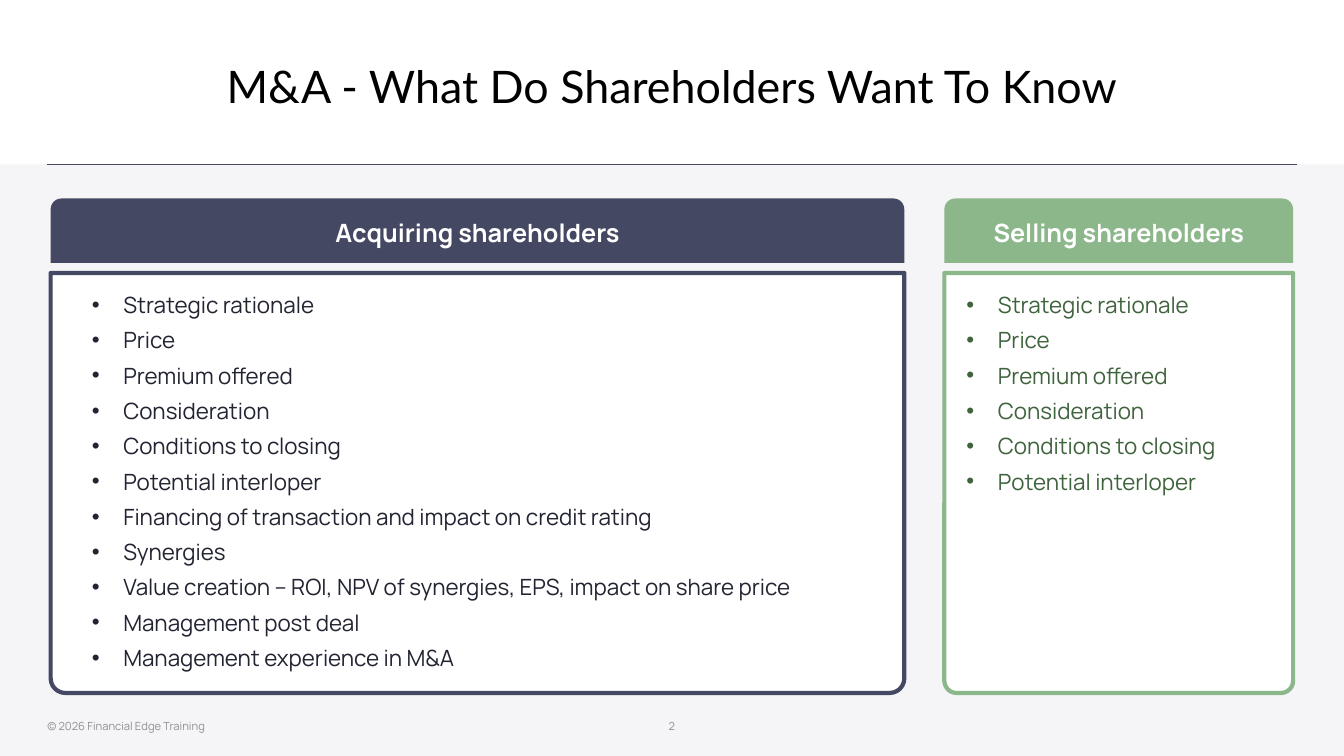
"""Build the slide on what acquiring and selling shareholders want to know."""
from lxml import etree
from pptx import Presentation
from pptx.dml.color import RGBColor
from pptx.enum import shapes, text
from pptx.oxml import ns
from pptx.util import Pt

NAVY = RGBColor(0x44, 0x48, 0x63)
GREEN = RGBColor(0x8C, 0xB7, 0x8A)
DARK_GREEN = RGBColor(0x3F, 0x63, 0x3D)
INK = RGBColor(0x22, 0x24, 0x32)
GREY = RGBColor(0x90, 0x90, 0x90)
PALE = RGBColor(0xF5, 0xF5, 0xF7)
WHITE = RGBColor(0xFF, 0xFF, 0xFF)
BLACK = RGBColor(0, 0, 0)

TITLE = "M&A - What Do Shareholders Want To Know"
COPYRIGHT = "© 2026 Financial Edge Training"
PAGE = "2"
SHARED = [
    "Strategic rationale",
    "Price",
    "Premium offered",
    "Consideration",
    "Conditions to closing",
    "Potential interloper",
]
ACQUIRER_ONLY = [
    "Financing of transaction and impact on credit rating",
    "Synergies",
    "Value creation – ROI, NPV of synergies, EPS, impact on share price",
    "Management post deal",
    "Management experience in M&A",
]
PANELS = [
    {"heading": "Acquiring shareholders", "points": SHARED + ACQUIRER_ONLY,
     "left": 36.2, "width": 609.8, "indent": 22.3, "color": NAVY, "ink": INK},
    {"heading": "Selling shareholders", "points": SHARED,
     "left": 674.6, "width": 249.1, "indent": 8.7, "color": GREEN, "ink": DARK_GREEN},
]

SLIDE_WIDTH, SLIDE_HEIGHT = 960, 540
MARGIN = 33.8
RULE_TOP = 117.4
HEADER_TOP, HEADER_HEIGHT = 141.8, 46.1
BODY_TOP, BODY_HEIGHT = 195, 300
LIST_TOP, LIST_HEIGHT = 204.5, 281
HANGING = 22.5
FOOTER_TOP, FOOTER_HEIGHT = 507.6, 21.6


def points(*lengths):
    return [Pt(length) for length in lengths]


def add_run(paragraph, content, size, color, bold=False, font="Manrope"):
    run = paragraph.add_run()
    run.text = content
    run.font.name = font
    run.font.size = Pt(size)
    run.font.bold = bold
    run.font.color.rgb = color


def add_block(slide, kind, box, fill, line=None):
    shape = slide.shapes.add_shape(kind, *points(*box))
    shape.shadow.inherit = False
    shape.fill.solid()
    shape.fill.fore_color.rgb = fill
    if line is None:
        shape.line.fill.background()
    else:
        shape.line.color.rgb = line
        shape.line.width = Pt(3)
    return shape


def add_frame(slide, *box):
    frame = slide.shapes.add_textbox(*points(*box)).text_frame
    frame.word_wrap = True
    return frame


def add_bullet(paragraph, color):
    properties = paragraph._p.get_or_add_pPr()
    properties.set("marL", str(Pt(HANGING)))
    properties.set("indent", str(-Pt(HANGING)))
    bullet_color = etree.SubElement(properties, ns.qn("a:buClr"))
    etree.SubElement(bullet_color, ns.qn("a:srgbClr"), val=str(color))
    etree.SubElement(properties, ns.qn("a:buFont"), typeface="Arial")
    etree.SubElement(properties, ns.qn("a:buChar"), char="•")


def add_background(slide):
    add_block(slide, shapes.MSO_SHAPE.RECTANGLE,
              (0, RULE_TOP, SLIDE_WIDTH, SLIDE_HEIGHT - RULE_TOP), PALE)
    rule = slide.shapes.add_connector(
        shapes.MSO_CONNECTOR.STRAIGHT,
        *points(MARGIN, RULE_TOP, SLIDE_WIDTH - MARGIN, RULE_TOP))
    rule.line.color.rgb = NAVY
    rule.line.width = Pt(0.75)
    etree.SubElement(rule._element.spPr, ns.qn("a:effectLst"))


def add_title(slide):
    title = slide.shapes.title
    title.left, title.top, title.width, title.height = points(
        MARGIN, 31.7, SLIDE_WIDTH - 2 * MARGIN, 59)
    frame = title.text_frame
    frame.word_wrap = True
    frame.vertical_anchor = text.MSO_ANCHOR.MIDDLE
    paragraph = frame.paragraphs[0]
    paragraph.alignment = text.PP_ALIGN.CENTER
    add_run(paragraph, TITLE, 32, BLACK, font="Lato")


def add_panel(slide, panel):
    left, width = panel["left"], panel["width"]
    rounded = shapes.MSO_SHAPE.ROUND_2_SAME_RECTANGLE
    header = add_block(slide, rounded, (left, HEADER_TOP, width, HEADER_HEIGHT),
                       panel["color"])
    header.text_frame.vertical_anchor = text.MSO_ANCHOR.MIDDLE
    heading = header.text_frame.paragraphs[0]
    heading.alignment = text.PP_ALIGN.CENTER
    add_run(heading, panel["heading"], 18, WHITE, bold=True)

    body = add_block(slide, rounded, (left, BODY_TOP, width, BODY_HEIGHT),
                     WHITE, panel["color"])
    body.adjustments[0] = 0
    body.adjustments[1] = 0.035

    indent = panel["indent"]
    frame = add_frame(slide, left + indent, LIST_TOP, width - 2 * indent, LIST_HEIGHT)
    for index, point in enumerate(panel["points"]):
        paragraph = frame.add_paragraph() if index else frame.paragraphs[0]
        add_bullet(paragraph, panel["ink"])
        paragraph.space_after = Pt(6)
        add_run(paragraph, point, 16, panel["ink"])


def add_footer(slide, content, left, width, alignment, inset):
    frame = add_frame(slide, left, FOOTER_TOP, width, FOOTER_HEIGHT)
    frame.margin_left = Pt(inset)
    frame.vertical_anchor = text.MSO_ANCHOR.MIDDLE
    paragraph = frame.paragraphs[0]
    paragraph.alignment = alignment
    add_run(paragraph, content, 8, GREY)


def main():
    presentation = Presentation()
    presentation.slide_width, presentation.slide_height = points(SLIDE_WIDTH, SLIDE_HEIGHT)
    slide = presentation.slides.add_slide(presentation.slide_layouts[5])
    add_background(slide)
    add_title(slide)
    for panel in PANELS:
        add_panel(slide, panel)
    add_footer(slide, COPYRIGHT, MARGIN, 320, text.PP_ALIGN.LEFT, 0)
    add_footer(slide, PAGE, (SLIDE_WIDTH - 216) / 2, 216, text.PP_ALIGN.CENTER, 7.2)
    presentation.save("out.pptx")


if __name__ == "__main__":
    main()
